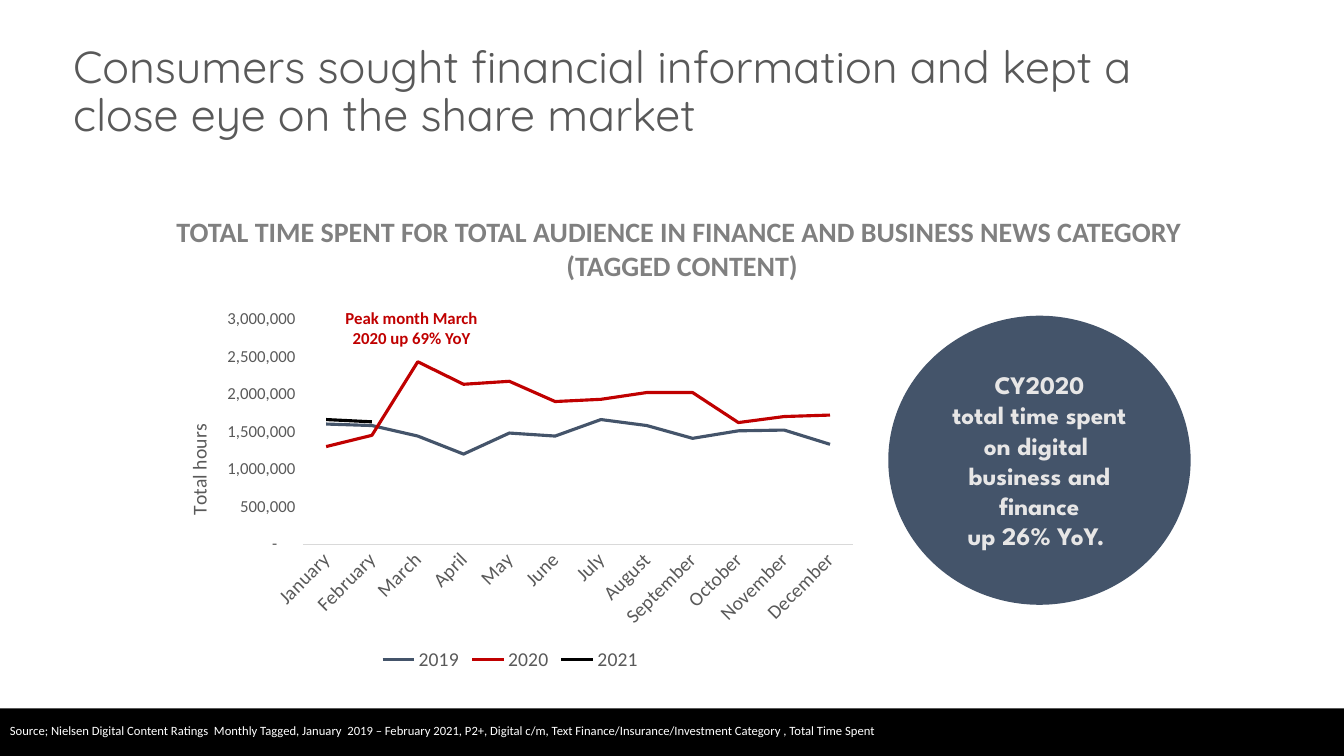
import pptx
import pptx.util
import pptx.chart.data
import pptx.dml.color
import pptx.enum.chart
import pptx.enum.shapes
import pptx.enum.text
import pptx.oxml
import pptx.oxml.ns
from dataclasses import dataclass

Pt = pptx.util.Pt
ALIGN = pptx.enum.text.PP_ALIGN
ANCHOR = pptx.enum.text.MSO_ANCHOR
SHAPE = pptx.enum.shapes.MSO_SHAPE
CHART = pptx.enum.chart

TITLE = "Consumers sought financial information and kept a close eye on the share market"
HEAD = [
    "TOTAL TIME SPENT FOR TOTAL AUDIENCE IN FINANCE AND BUSINESS NEWS CATEGORY ",
    "(TAGGED CONTENT)",
]
SOURCE = (
    "Source; Nielsen Digital Content Ratings  Monthly Tagged, January  2019 – February 2021, "
    "P2+, Digital c/m, Text Finance/Insurance/Investment Category , Total Time Spent"
)
PEAK = "Peak month March 2020 up 69% YoY"
CLAIM = ["CY2020", "total time spent on digital \vbusiness and finance\vup 26% YoY. "]
UNIT = "Total hours"
MONTHS = [
    "January", "February", "March", "April", "May", "June", "July",
    "August", "September", "October", "November", "December",
]
HOURS = {
    "2019": [1600000, 1580000, 1440000, 1200000, 1480000, 1440000,
             1660000, 1580000, 1410000, 1510000, 1520000, 1330000],
    "2020": [1300000, 1450000, 2430000, 2130000, 2170000, 1900000,
             1930000, 2020000, 2020000, 1620000, 1700000, 1720000],
    "2021": [1660000, 1630000] + [None] * 10,
}
FORMAT = '_-* #,##0_-;\\-* #,##0_-;_-* "-"??_-;_-@_'


@dataclass
class Theme:
    body: str = "Calibri"
    title: str = "Quicksand"
    round: str = "League Spartan"
    black: str = "000000"
    white: str = "FFFFFF"
    text: str = "595959"
    gray: str = "808080"
    rule: str = "D9D9D9"
    navy: str = "44546A"
    red: str = "C00000"
    pale: str = "E7E6E6"
    huge: int = 32
    large: int = 20
    big: int = 18
    label: int = 14
    small: int = 12
    tiny: int = 9


T = Theme()


def color(code):
    return pptx.dml.color.RGBColor.from_string(code)


def style(font, size, code=T.text, face=T.body, bold=False):
    font.size, font.name, font.bold = Pt(size), face, bold
    font.color.rgb = color(code)


def write(frame, text, align=ALIGN.LEFT, anchor=ANCHOR.TOP, space=None, **look):
    frame.word_wrap = True
    frame.auto_size = pptx.enum.text.MSO_AUTO_SIZE.NONE
    frame.vertical_anchor = anchor
    lines = [text] if isinstance(text, str) else text
    for i, line in enumerate(lines):
        para = frame.add_paragraph() if i else frame.paragraphs[0]
        para.text = line
        para.alignment = align
        if space:
            para.line_spacing = space
        for run in para.runs:
            style(run.font, **look)


def place(*box):
    return [Pt(n) for n in box]


def label(slide, text, box, **look):
    write(slide.shapes.add_textbox(*place(*box)).text_frame, text, **look)


def solid(slide, kind, box, code):
    item = slide.shapes.add_shape(kind, *place(*box))
    item.shadow.inherit = False
    item.fill.solid()
    item.fill.fore_color.rgb = color(code)
    item.line.fill.background()
    return item


def layout(x, y, w=None, h=None):
    parts = [("xMode", "edge"), ("yMode", "edge"), ("x", x), ("y", y)]
    if w:
        parts = [("layoutTarget", "inner")] + parts + [("w", w), ("h", h)]
    body = "".join(f'<c:{k} val="{v}"/>' for k, v in parts)
    names = pptx.oxml.ns.nsdecls("c")
    return pptx.oxml.parse_xml(f"<c:layout {names}><c:manualLayout>{body}</c:manualLayout></c:layout>")


def fix(parent, child):
    for old in parent.findall(pptx.oxml.ns.qn("c:layout")):
        parent.remove(old)
    tx = parent.find(pptx.oxml.ns.qn("c:tx"))
    parent.insert(0 if tx is None else 1, child)


def plot(slide, box):
    data = pptx.chart.data.CategoryChartData(number_format=FORMAT)
    data.categories = MONTHS
    for name, values in HOURS.items():
        data.add_series(name, values)
    chart = slide.shapes.add_chart(CHART.XL_CHART_TYPE.LINE, *place(*box), data).chart
    chart.has_title = False
    style(chart.font, T.small)
    chart.has_legend = True
    chart.legend.position = CHART.XL_LEGEND_POSITION.BOTTOM
    chart.legend.include_in_layout = False
    style(chart.legend.font, T.label)
    chart.plots[0].vary_by_categories = False
    for row, code in zip(chart.plots[0].series, (T.navy, T.red, T.black)):
        row.smooth = False
        row.marker.style = CHART.XL_MARKER_STYLE.NONE
        row.format.line.width = Pt(2.25)
        row.format.line.color.rgb = color(code)

    months, hours = chart.category_axis, chart.value_axis
    for axis, size in ((months, T.label), (hours, T.small)):
        axis.has_major_gridlines = False
        axis.major_tick_mark = axis.minor_tick_mark = CHART.XL_TICK_MARK.NONE
        style(axis.tick_labels.font, size)
    months.format.line.color.rgb = color(T.rule)
    months.format.line.width = Pt(0.75)
    turn = months._element.find(".//" + pptx.oxml.ns.qn("a:bodyPr"))
    turn.set("rot", "-2700000")

    hours.minimum_scale, hours.maximum_scale, hours.major_unit = 0, 3000000, 500000
    hours.format.line.fill.background()
    hours.tick_labels.number_format = FORMAT
    hours.tick_labels.number_format_is_linked = False
    frame = hours.axis_title.text_frame
    frame.text = UNIT
    style(frame.paragraphs[0].runs[0].font, T.label)
    turn = frame._txBody.find(pptx.oxml.ns.qn("a:bodyPr"))
    turn.set("rot", "-5400000")
    turn.set("vert", "horz")
    fix(hours.axis_title._element, layout(0.04, 0.32))
    fix(chart._chartSpace.chart.plotArea, layout(0.21, 0.05, 0.77, 0.6))


def main():
    deck = pptx.Presentation()
    deck.slide_width, deck.slide_height = Pt(960), Pt(540)
    slide = deck.slides.add_slide(deck.slide_layouts[5])
    solid(slide, SHAPE.RECTANGLE, (0, 506, 960, 34), T.black)
    title = slide.shapes.title
    title.left, title.top, title.width, title.height = place(45, 18, 788, 96.5)
    write(title.text_frame, TITLE, anchor=ANCHOR.MIDDLE, space=0.9,
          size=T.huge, face=T.title)
    label(slide, HEAD, (14.5, 150, 945.5, 55.5), align=ALIGN.CENTER,
          size=T.large, code=T.gray, bold=True)
    label(slide, SOURCE, (0, 512.5, 899, 18), size=T.tiny, code=T.white)
    plot(slide, (109.5, 214.5, 510, 268))
    label(slide, PEAK, (229.5, 216.5, 129, 36), align=ALIGN.CENTER,
          size=T.small, code=T.red, bold=True)
    badge = solid(slide, SHAPE.OVAL, (634.5, 225.5, 216, 206.5), T.navy)
    write(badge.text_frame, CLAIM, align=ALIGN.CENTER, anchor=ANCHOR.MIDDLE,
          size=T.big, face=T.round, code=T.pale, bold=True)
    deck.save("out.pptx")


if __name__ == "__main__":
    main()
